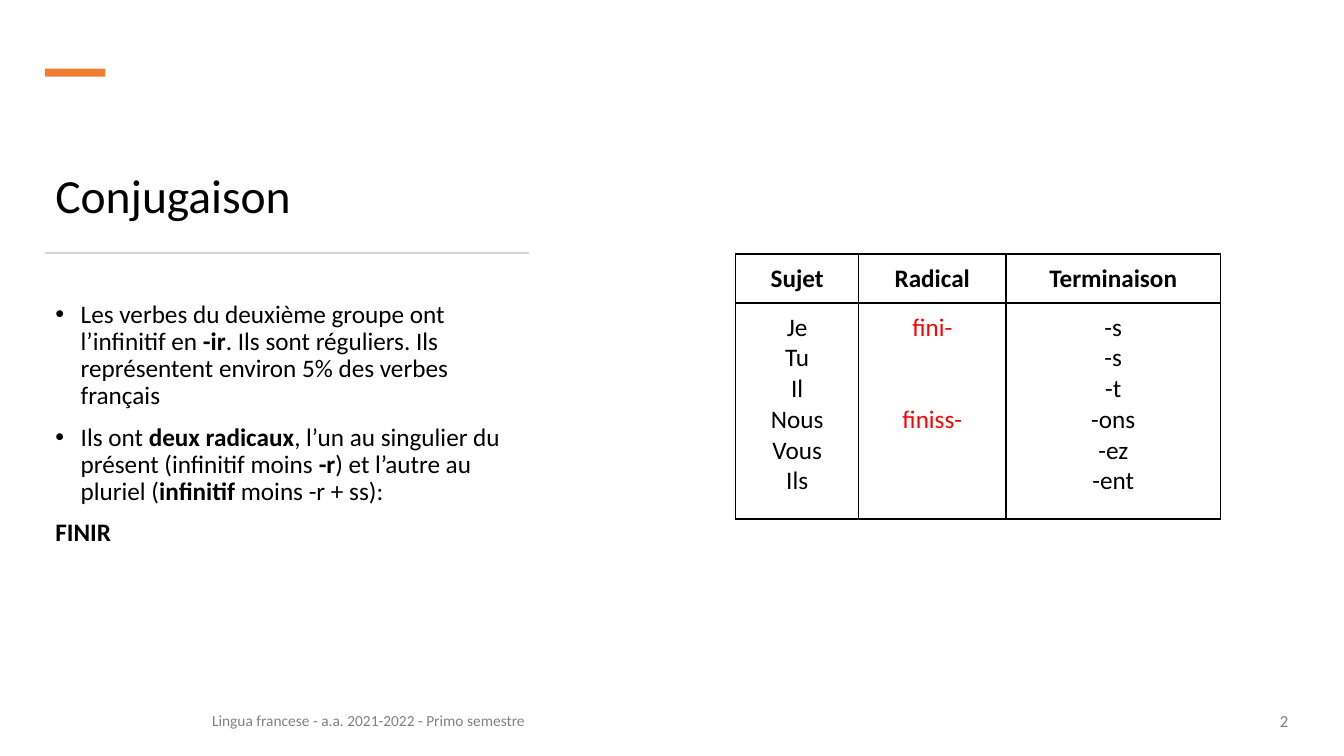
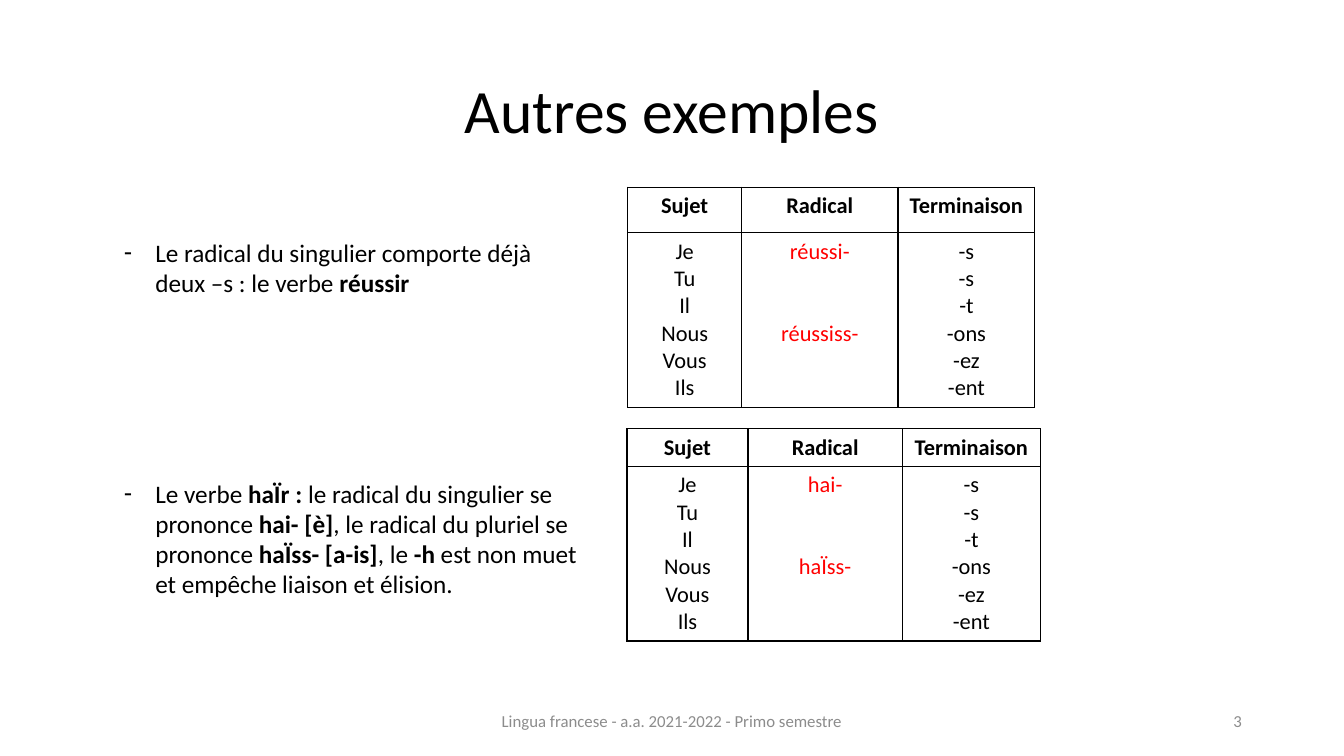
from lxml.etree import SubElement
from pptx import Presentation
from pptx.dml.color import RGBColor
from pptx.enum.shapes import MSO_SHAPE
from pptx.enum.text import MSO_ANCHOR, MSO_AUTO_SIZE, PP_ALIGN
from pptx.oxml.ns import qn
from pptx.util import Cm, Pt

FONT = "Calibri"
LINE_FACTOR = 1.22  # height of a text line relative to the font size
BLACK = RGBColor(0x00, 0x00, 0x00)
WHITE = RGBColor(0xFF, 0xFF, 0xFF)
RED = RGBColor(0xFF, 0x00, 0x00)
ORANGE = RGBColor(0xED, 0x7D, 0x31)
RULE_GRAY = RGBColor(0xD5, 0xD5, 0xD5)
MID_GRAY = RGBColor(0x80, 0x80, 0x80)
LIGHT_GRAY = RGBColor(0x8C, 0x8C, 0x8C)

# Content: text between ** marks is bold; boxes are left, top, width, height in cm
FOOTER = "Lingua francese - a.a. 2021-2022 - Primo semestre"
HEADERS = ["Sujet", "Radical", "Terminaison"]
SUBJECTS = ["Je", "Tu", "Il", "Nous", "Vous", "Ils"]
ENDINGS = ["-s", "-s", "-t", "-ons", "-ez", "-ent"]

RULE_LIST = [
    ("Les verbes du deuxième groupe ont l’infinitif en** -ir**. Ils sont réguliers. "
     "Ils représentent environ 5% des verbes français", {"bullet": "•", "indent": 0.64}),
    ("Ils ont **deux radicaux**, l’un au singulier du présent (infinitif moins **-r**) "
     "et l’autre au pluriel (**infinitif** moins -r + ss):", {"bullet": "•", "indent": 0.64}),
    ("**FINIR**", {}),
]
EXAMPLE_LIST = [
    ("Le radical du singulier comporte déjà deux –s : le verbe **réussir**", {}),
    ("Le verbe **haÏr : **le radical du singulier se prononce **hai- [è]**, le radical "
     "du pluriel se prononce **haÏss- [a-is]**, le **-h** est non muet et empêche "
     "liaison et élision.", {"before": 129}),
]

SLIDES = [
    {
        "title": "Conjugaison",
        "title_box": (1.14, 2.74, 12.34, 3.02),
        "title_format": {"size": 34, "line": 0.9},
        "title_anchor": MSO_ANCHOR.BOTTOM,
        "list": RULE_LIST,
        "list_box": (1.14, 7.47, 12.34, 9.7),
        "list_format": {"size": 18, "line": 0.9, "before": 10},
        "bars": [((1.14, 1.73, 1.52, 0.2), ORANGE), ((1.14, 6.35, 12.19, 0.05), RULE_GRAY)],
        "tables": [
            {"stems": ("fini-", "finiss-"), "corner": (18.54, 6.4), "size": 18,
             "columns": (3.1, 3.71, 5.41), "rows": (1.22, 5.44), "margins": (0.46, 0.23)},
        ],
        "footer_box": (5.08, 17.65, 8.41, 1.02),
        "footer_format": {"size": 11, "color": MID_GRAY, "align": PP_ALIGN.RIGHT},
        "number_left": 25.1,
    },
    {
        "title": "Autres exemples",
        "title_box": (2.33, 1.01, 29.21, 3.68),
        "title_format": {"size": 44, "line": 0.9, "align": PP_ALIGN.CENTER},
        "title_anchor": MSO_ANCHOR.MIDDLE,
        "list": EXAMPLE_LIST,
        "list_box": (2.87, 5.84, 11.94, 12.57),
        "list_format": {"size": 18, "bullet": "-", "indent": 0.79},
        "bars": [],
        "tables": [
            {"stems": ("réussi-", "réussiss-"), "corner": (15.82, 4.72), "size": 16,
             "columns": (2.87, 3.94, 3.45), "rows": (1.14, 4.38), "margins": (0.25, 0.13)},
            {"stems": ("hai-", "haÏss-"), "corner": (15.8, 10.8), "size": 16,
             "columns": (3.05, 3.89, 3.48), "rows": (0.94, 4.38), "margins": (0.25, 0.13)},
        ],
        "footer_box": (11.22, 17.65, 11.43, 1.02),
        "footer_format": {"size": 12, "color": LIGHT_GRAY, "align": PP_ALIGN.CENTER},
        "number_left": 23.93,
    },
]
FIRST_NUMBER = 2


def to_cm(values):
    return [Cm(value) for value in values]


def write_paragraph(paragraph, text, size=18, color=BLACK, bold=False, align=PP_ALIGN.LEFT,
                    line=1.0, before=0, bullet=None, indent=0):
    paragraph.alignment = align
    paragraph.line_spacing = line
    paragraph.space_before = Pt(before)
    paragraph.space_after = Pt(0)
    properties = paragraph._p.get_or_add_pPr()
    properties.set("marL", str(Cm(indent)))
    properties.set("indent", str(-Cm(indent)))
    if bullet:
        SubElement(properties, qn("a:buChar")).set("char", bullet)
    else:
        SubElement(properties, qn("a:buNone"))
    for index, part in enumerate(text.split("**")):
        if part:
            run = paragraph.add_run()
            run.text = part
            run.font.name = FONT
            run.font.size = Pt(size)
            run.font.bold = bold or index % 2 == 1
            run.font.color.rgb = color


def write_text(frame, items, **text_format):
    """Write (text, format) items, each with its own changes to the shared format."""
    for index, (text, changes) in enumerate(items):
        paragraph = frame.add_paragraph() if index else frame.paragraphs[0]
        write_paragraph(paragraph, text, **{**text_format, **changes})


def fill_box(shape, box, items, anchor=MSO_ANCHOR.TOP, **text_format):
    shape.left, shape.top, shape.width, shape.height = to_cm(box)
    frame = shape.text_frame
    frame.word_wrap = True
    frame.auto_size = MSO_AUTO_SIZE.NONE
    frame.vertical_anchor = anchor
    write_text(frame, items, **text_format)


def add_text(slide, box, text, **text_format):
    fill_box(slide.shapes.add_textbox(*to_cm(box)), box, [(text, {})],
             anchor=MSO_ANCHOR.MIDDLE, **text_format)


def add_bar(slide, box, color):
    bar = slide.shapes.add_shape(MSO_SHAPE.RECTANGLE, *to_cm(box))
    bar.shadow.inherit = False
    bar.fill.solid()
    bar.fill.fore_color.rgb = color
    bar.line.fill.background()


def style_cell(cell, margins):
    cell.margin_left = cell.margin_right = Cm(margins[0])
    cell.margin_top = cell.margin_bottom = Cm(margins[1])
    properties = cell._tc.get_or_add_tcPr()
    for side in ("lnL", "lnR", "lnT", "lnB"):
        border = SubElement(properties, qn(f"a:{side}"), w=str(Pt(1)))
        fill = SubElement(border, qn("a:solidFill"))
        SubElement(fill, qn("a:srgbClr"), val=str(BLACK))
    cell.fill.solid()
    cell.fill.fore_color.rgb = WHITE


def add_verb_table(slide, stems, corner, size, columns, rows, margins):
    box = (*corner, sum(columns), sum(rows))
    table = slide.shapes.add_table(len(rows), len(columns), *to_cm(box)).table
    table.first_row = table.horz_banding = False
    for row, height in zip(table.rows, rows):
        row.height = Cm(height)

    # The plural stem stands beside "Nous", two lines below the singular one
    singular, plural = stems
    stem_gap = round(2 * LINE_FACTOR * size, 1)
    bodies = [
        [(subject, {}) for subject in SUBJECTS],
        [(singular, {"color": RED}), (plural, {"color": RED, "before": stem_gap})],
        [(ending, {}) for ending in ENDINGS],
    ]
    for index, (header, body) in enumerate(zip(HEADERS, bodies)):
        table.columns[index].width = Cm(columns[index])
        for row, items in enumerate(([(header, {"bold": True})], body)):
            cell = table.cell(row, index)
            style_cell(cell, margins)
            write_text(cell.text_frame, items, size=size, align=PP_ALIGN.CENTER)


def add_lesson_slide(presentation, content, number):
    slide = presentation.slides.add_slide(presentation.slide_layouts[1])
    title, body = slide.placeholders

    # Title and list
    fill_box(title, content["title_box"], [(content["title"], {})],
             anchor=content["title_anchor"], **content["title_format"])
    fill_box(body, content["list_box"], content["list"], **content["list_format"])

    # Accent bars and conjugation tables
    for box, color in content["bars"]:
        add_bar(slide, box, color)
    for table in content["tables"]:
        add_verb_table(slide, **table)

    # Footer and slide number
    footer_format = content["footer_format"]
    add_text(slide, content["footer_box"], FOOTER, **footer_format)
    add_text(slide, (content["number_left"], 17.65, 7.62, 1.02), str(number),
             size=12, color=footer_format["color"], align=PP_ALIGN.RIGHT)


def main():
    presentation = Presentation()
    presentation.slide_width, presentation.slide_height = to_cm((33.87, 19.05))
    for number, content in enumerate(SLIDES, FIRST_NUMBER):
        add_lesson_slide(presentation, content, number)
    presentation.save("out.pptx")


if __name__ == "__main__":
    main()
